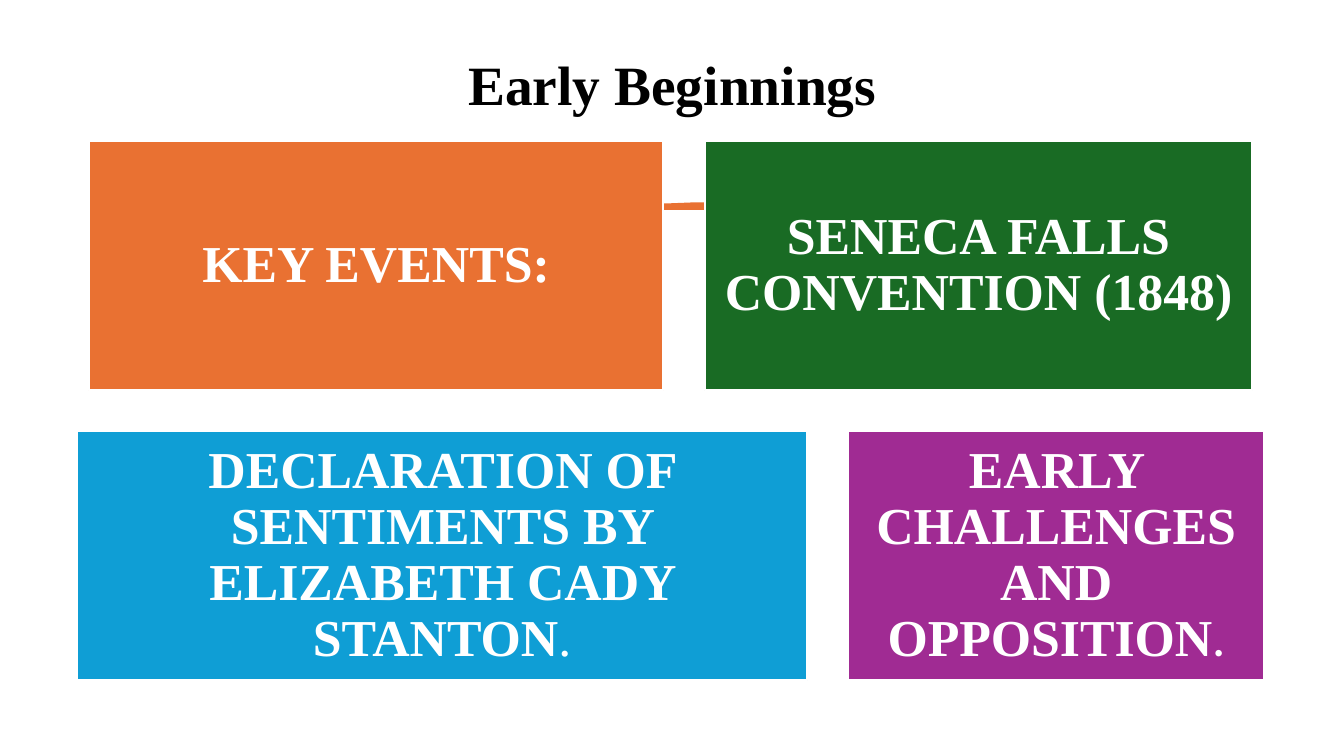
from pptx import Presentation
from pptx.dml.color import RGBColor
from pptx.enum.shapes import MSO_SHAPE
from pptx.enum.text import MSO_ANCHOR, PP_ALIGN
from pptx.util import Inches, Pt

COLORS = {"orange": "E97132", "green": "196B24", "blue": "0F9ED5",
          "purple": "A02B93", "white": "FFFFFF", "black": "000000"}
FONT = "Times New Roman"


def rgb(name):
    return RGBColor.from_string(COLORS[name])


def set_text(sp, text, size, color):
    """Centre bold text in a shape and return its paragraph."""
    tf = sp.text_frame
    tf.word_wrap = True
    tf.vertical_anchor = MSO_ANCHOR.MIDDLE
    p = tf.paragraphs[0]
    p.alignment = PP_ALIGN.CENTER
    p.line_spacing = 0.9
    r = p.add_run()
    r.text = text
    r.font.name, r.font.size, r.font.bold = FONT, Pt(size), True
    r.font.color.rgb = rgb(color)
    return p


prs = Presentation()
prs.slide_width, prs.slide_height = Inches(13.33), Inches(7.5)
s = prs.slides.add_slide(prs.slide_layouts[6])

# Title
title = s.shapes.add_textbox(Inches(0.92), Inches(0.42), Inches(11.5), Inches(0.9))
set_text(title, "Early Beginnings", 39.6, "black")

# Hand-drawn rule running behind the top cards
outline = [(6.65, 2.04), (6.9, 2.03), (12.32, 2.04), (12.32, 2.06), (6.7, 2.06), (0.92, 2.06)]
fb = s.shapes.build_freeform(Inches(0.92), Inches(2.04))
fb.add_line_segments([(Inches(x), Inches(y)) for x, y in outline], close=True)
rule = fb.convert_to_shape()
rule.shadow.inherit = False
rule.fill.solid()
rule.fill.fore_color.rgb = rgb("orange")
rule.line.color.rgb = rgb("orange")
rule.line.width = Pt(3.25)

# Cards: each row is centred, with one gap between cards and rows
CENTER, TOP, HEIGHT, GAP = 6.65, 1.4, 2.47, 0.41
rows = [
    [("KEY EVENTS:", "", FONT, 5.7, "orange"),
     ("SENECA FALLS CONVENTION (1848)", "", FONT, 5.43, "green")],
    [("DECLARATION OF SENTIMENTS BY ELIZABETH CADY STANTON", ".", FONT, 7.24, "blue"),
     ("EARLY CHALLENGES AND OPPOSITION", ".", "Lato", 4.12, "purple")],
]
for i, row in enumerate(rows):
    left = CENTER - (sum(card[3] for card in row) + GAP) / 2
    top = TOP + i * (HEIGHT + GAP)
    for text, stop, stop_font, width, color in row:
        sp = s.shapes.add_shape(MSO_SHAPE.RECTANGLE, Inches(left), Inches(top),
                                Inches(width), Inches(HEIGHT))
        sp.shadow.inherit = False
        sp.fill.solid()
        sp.fill.fore_color.rgb = rgb(color)
        sp.line.color.rgb = rgb("white")
        sp.line.width = Pt(1.5)
        tf = sp.text_frame
        tf.margin_left = tf.margin_right = tf.margin_top = tf.margin_bottom = Inches(0.15)
        p = set_text(sp, text, 37, "white")
        if stop:
            r = p.add_run()
            r.text = stop
            r.font.name, r.font.size, r.font.bold = stop_font, Pt(37), False
            r.font.color.rgb = rgb("white")
        left += width + GAP

prs.save("out.pptx")
